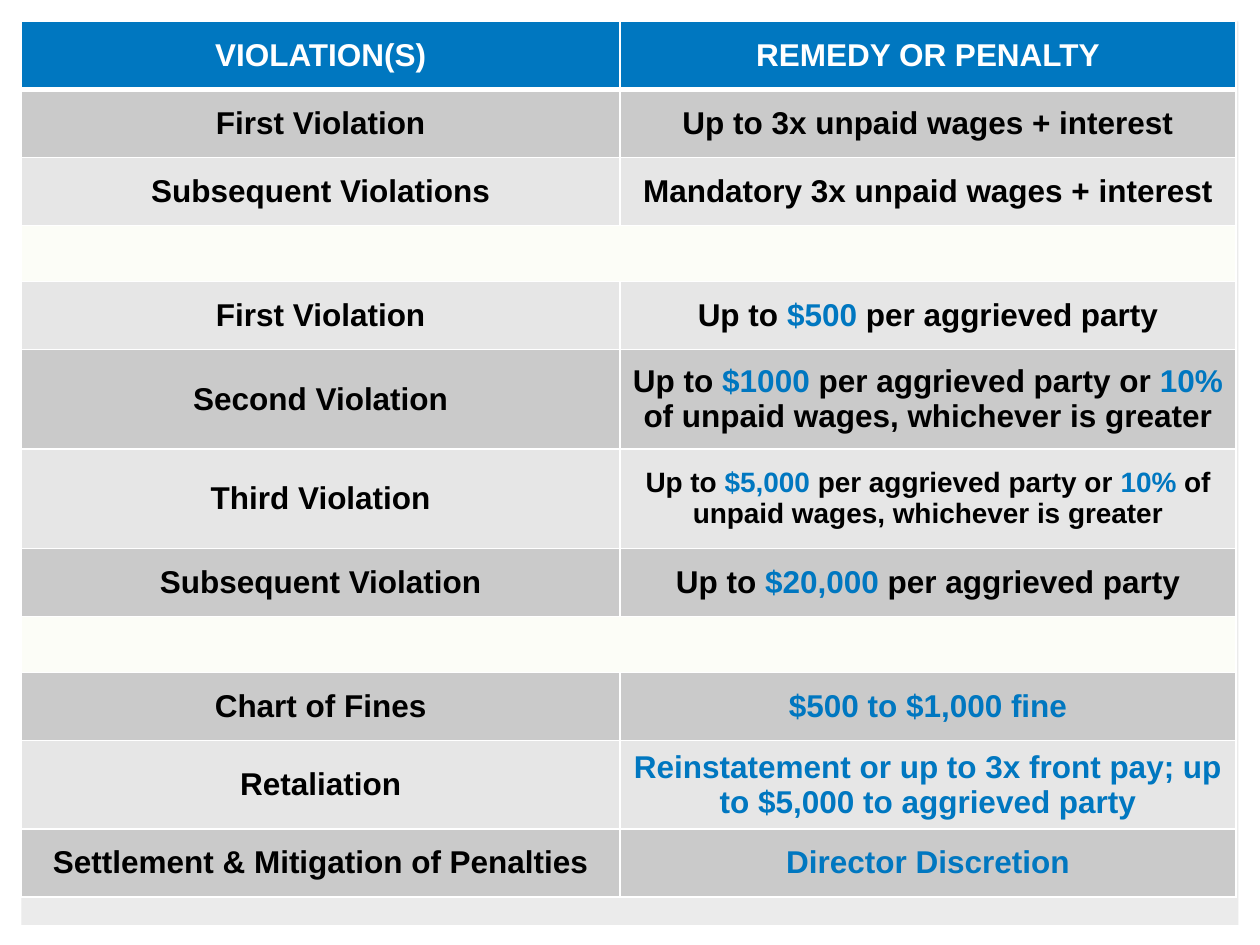
from lxml import etree
from pptx import Presentation
from pptx.dml.color import RGBColor
from pptx.enum.shapes import MSO_SHAPE
from pptx.enum.text import MSO_ANCHOR, PP_ALIGN
from pptx.oxml.ns import qn
from pptx.util import Inches, Pt

RECTANGLE = MSO_SHAPE.RECTANGLE
MIDDLE = MSO_ANCHOR.MIDDLE
CENTER = PP_ALIGN.CENTER

THEME = {
    "font": "Arial", "size": 18, "small": 16,
    "text": "000000", "highlight": "0077C0", "heading": "FFFFFF",
    "panel": "EBEBEB", "border": "FFFFFF",
    "header": "0077C0", "dark": "CACACA", "light": "E6E6E6", "spacer": "FCFDF7",
}

# Remedy pieces alternate between plain and highlighted text.
ROWS = [
    ("header", 0.54, "VIOLATION(S)", ["REMEDY OR PENALTY"]),
    ("dark", 0.54, "First Violation", ["Up to 3x unpaid wages + interest"]),
    ("light", 0.54, "Subsequent Violations", ["Mandatory 3x unpaid wages + interest"]),
    ("spacer", 0.43, "", []),
    ("light", 0.54, "First Violation", ["Up to ", "$500", " per aggrieved party"]),
    ("dark", 0.79, "Second Violation",
     ["Up to ", "$1000", " per aggrieved party or ", "10%", " of unpaid wages, whichever is greater"]),
    ("light", 0.79, "Third Violation",
     ["Up to ", "$5,000", " per aggrieved party or ", "10%", " of unpaid wages, whichever is greater"]),
    ("dark", 0.54, "Subsequent Violation", ["Up to ", "$20,000", " per aggrieved party"]),
    ("spacer", 0.43, "", []),
    ("dark", 0.54, "Chart of Fines", ["", "$500 to $1,000 fine"]),
    ("light", 0.7, "Retaliation",
     ["", "Reinstatement or up to 3x front pay; up to $5,000 to aggrieved party"]),
    ("dark", 0.54, "Settlement & Mitigation of Penalties", ["", "Director Discretion"]),
]
SMALL_REMEDIES = {"Third Violation"}
COLUMN_WIDTHS = [4.75, 4.89]
MARGIN = 0.17
INSET = 0.07


def color(name):
    return RGBColor.from_string(THEME[name])


def set_borders(cell, widths):
    properties = cell._tc.get_or_add_tcPr()
    for position, (side, width) in enumerate(widths.items()):
        line = etree.Element(qn(f"a:ln{side}"), w=str(Pt(width)))
        if width:
            fill = etree.SubElement(line, qn("a:solidFill"))
            etree.SubElement(fill, qn("a:srgbClr"), val=THEME["border"])
        else:
            etree.SubElement(line, qn("a:noFill"))
        properties.insert(position, line)


def fill_cell(cell, kind, pieces, size):
    cell.fill.solid()
    cell.fill.fore_color.rgb = color(kind)
    cell.vertical_anchor = MIDDLE
    cell.margin_left = cell.margin_right = Inches(INSET)
    cell.margin_top = cell.margin_bottom = Inches(INSET)
    paragraph = cell.text_frame.paragraphs[0]
    paragraph.alignment = CENTER
    plain = "heading" if kind == "header" else "text"
    for index, piece in enumerate(pieces):
        if piece:
            run = paragraph.add_run()
            run.text = piece
            run.font.name = THEME["font"]
            run.font.size = Pt(size)
            run.font.bold = True
            run.font.color.rgb = color("highlight" if index % 2 else plain)


def main():
    presentation = Presentation()
    presentation.slide_width, presentation.slide_height = Inches(10), Inches(7.5)
    slide = presentation.slides.add_slide(presentation.slide_layouts[6])

    panel = slide.shapes.add_shape(
        RECTANGLE, Inches(MARGIN), Inches(MARGIN), Inches(9.66), Inches(7.17))
    panel.shadow.inherit = False
    panel.fill.solid()
    panel.fill.fore_color.rgb = color("panel")
    panel.line.fill.background()

    penalties = slide.shapes.add_table(
        len(ROWS), len(COLUMN_WIDTHS), Inches(MARGIN), Inches(MARGIN),
        Inches(sum(COLUMN_WIDTHS)), Inches(sum(row[1] for row in ROWS))).table
    for column, width in zip(penalties.columns, COLUMN_WIDTHS):
        column.width = Inches(width)

    for row_index, (kind, height, violation, remedy) in enumerate(ROWS):
        penalties.rows[row_index].height = Inches(height)
        remedy_size = THEME["small" if violation in SMALL_REMEDIES else "size"]
        contents = [([violation], THEME["size"]), (remedy, remedy_size)]
        inner = 0 if kind == "spacer" else 1
        for column_index, (pieces, size) in enumerate(contents):
            cell = penalties.cell(row_index, column_index)
            fill_cell(cell, kind, pieces, size)
            set_borders(cell, {
                "L": inner if column_index else 1,
                "R": 1 if column_index else inner,
                "T": 3 if row_index == 1 else 1,
                "B": 3 if kind == "header" else 1,
            })

    presentation.save("out.pptx")


if __name__ == "__main__":
    main()
